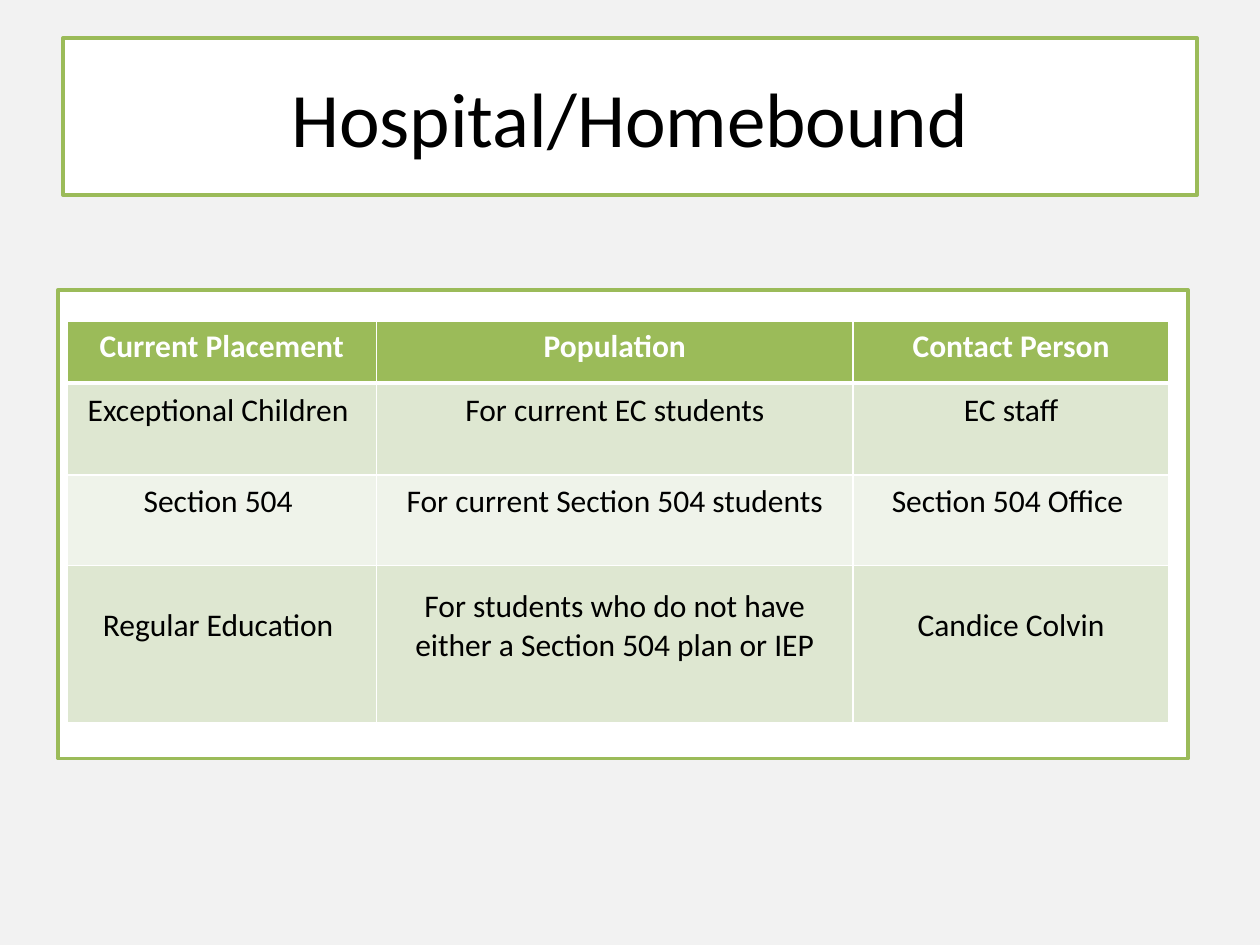
import pptx
import pptx.dml.color
import pptx.enum.shapes
import pptx.enum.text
import pptx.oxml
import pptx.oxml.ns
import pptx.util

Inches, Pt = pptx.util.Inches, pptx.util.Pt
ANCHOR = pptx.enum.text.MSO_ANCHOR

FONT = "Calibri"
GREEN, WHITE, BLACK, GREY = "9BBB59", "FFFFFF", "000000", "F2F2F2"
BANDS = ("DEE7D1", "EFF3EA")
COLUMN_WIDTHS = (2.46, 3.78, 2.51)
ROW_HEIGHTS = (0.49, 0.73, 0.72, 1.25)
ROWS = (
    ("Current Placement", "Population", "Contact Person"),
    ("Exceptional Children ", "For current EC students", "EC staff"),
    ("Section 504 ", "For current Section 504 students", "Section 504 Office "),
    ("Regular Education ",
     "For students who do not have either a Section 504 plan or IEP",
     "Candice Colvin"),
)


def color(value):
    return pptx.dml.color.RGBColor.from_string(value)


def fill_solid(target, value):
    target.fill.solid()
    target.fill.fore_color.rgb = color(value)


def write_text(text_frame, text, size=18, ink=BLACK, bold=False):
    paragraph = text_frame.paragraphs[0]
    paragraph.alignment = pptx.enum.text.PP_ALIGN.CENTER
    run = paragraph.add_run()
    run.text = text
    run.font.name = FONT
    run.font.size = Pt(size)
    run.font.bold = bold
    run.font.color.rgb = color(ink)


def style_panel(shape):
    """Give a shape the white fill and green outline."""
    fill_solid(shape, WHITE)
    shape.line.color.rgb = color(GREEN)
    shape.line.width = Pt(2)


def add_panel(slide, left, top, width, height):
    panel = slide.shapes.add_shape(
        pptx.enum.shapes.MSO_SHAPE.RECTANGLE,
        Inches(left), Inches(top), Inches(width), Inches(height))
    panel.shadow.inherit = False
    style_panel(panel)


def set_title(slide, text, left, top, width, height):
    title = slide.shapes.title
    title.left, title.top = Inches(left), Inches(top)
    title.width, title.height = Inches(width), Inches(height)
    style_panel(title)
    title.text_frame.vertical_anchor = ANCHOR.MIDDLE
    write_text(title.text_frame, text, size=44)


def set_borders(cell, top=1, bottom=1):
    """Draw white borders; widths are in points."""
    properties = cell._tc.get_or_add_tcPr()
    for side, width in (("L", 1), ("R", 1), ("T", top), ("B", bottom)):
        properties.append(pptx.oxml.parse_xml(
            f'<a:ln{side} {pptx.oxml.ns.nsdecls("a")} w="{Pt(width)}">'
            f'<a:solidFill><a:srgbClr val="{WHITE}"/></a:solidFill></a:ln{side}>'))


def style_cell(cell, text, row):
    is_header = row == 0
    set_borders(cell, top=3 if row == 1 else 1, bottom=3 if is_header else 1)
    fill_solid(cell, GREEN if is_header else BANDS[(row - 1) % 2])
    if is_header:
        cell.vertical_anchor = ANCHOR.TOP
    else:
        cell.vertical_anchor = ANCHOR.MIDDLE
        cell.margin_bottom = Inches(0.34)
    write_text(cell.text_frame, text, ink=WHITE if is_header else BLACK, bold=is_header)


def add_placement_table(slide, left, top):
    table = slide.shapes.add_table(
        len(ROW_HEIGHTS), len(COLUMN_WIDTHS), Inches(left), Inches(top),
        Inches(sum(COLUMN_WIDTHS)), Inches(sum(ROW_HEIGHTS))).table
    for column, width in zip(table.columns, COLUMN_WIDTHS):
        column.width = Inches(width)
    for row, height in zip(table.rows, ROW_HEIGHTS):
        row.height = Inches(height)
    for row, texts in enumerate(ROWS):
        for column, text in enumerate(texts):
            style_cell(table.cell(row, column), text, row)


def main():
    presentation = pptx.Presentation()
    presentation.slide_width, presentation.slide_height = Inches(10), Inches(7.5)
    slide = presentation.slides.add_slide(presentation.slide_layouts[5])
    fill_solid(slide.background, GREY)
    set_title(slide, "Hospital/Homebound", 0.5, 0.3, 9, 1.25)
    add_panel(slide, 0.46, 2.3, 8.97, 3.72)
    add_placement_table(slide, 0.53, 2.55)
    presentation.save("out.pptx")


if __name__ == "__main__":
    main()
